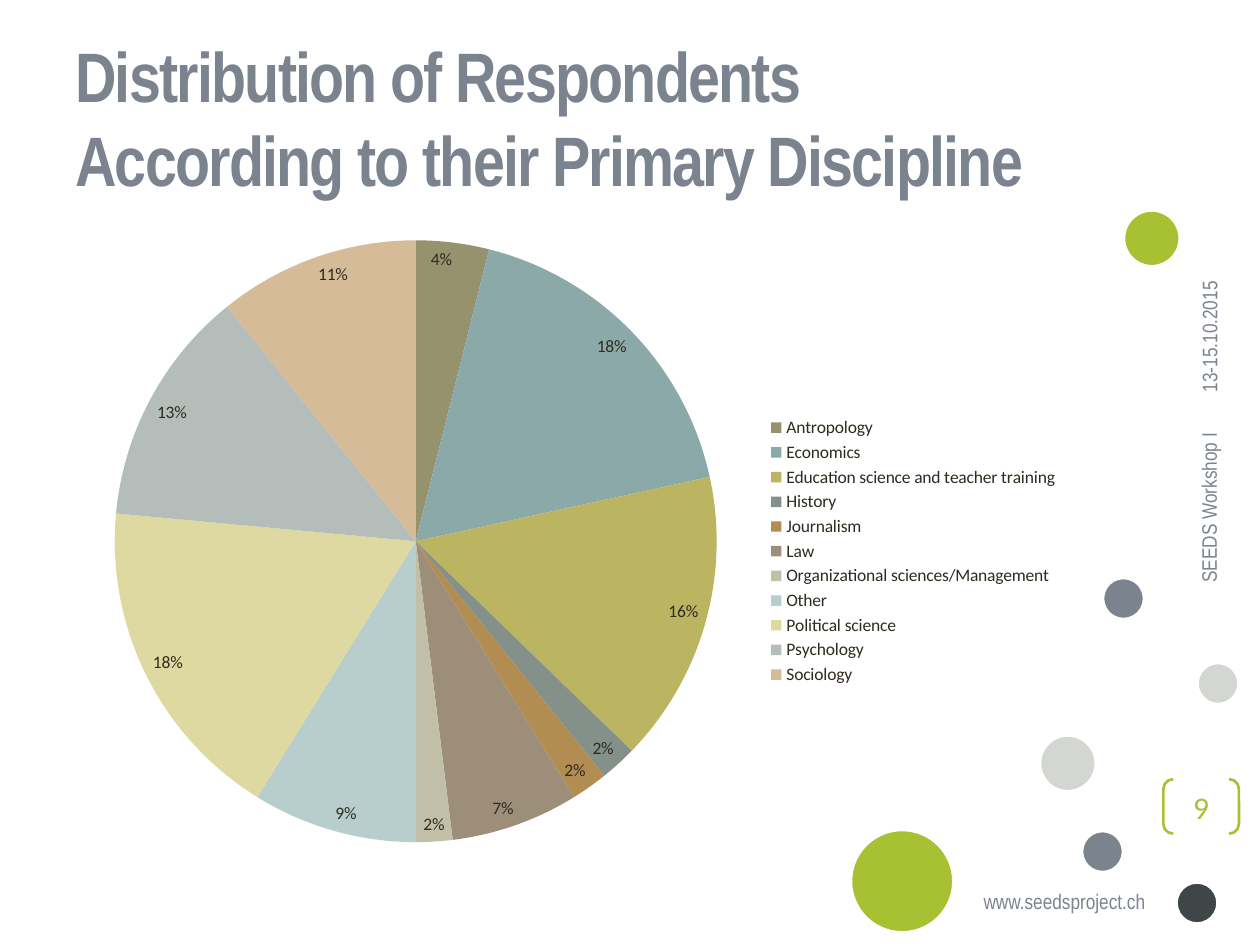
from dataclasses import dataclass
from typing import Any

from lxml.etree import SubElement
from pptx import Presentation
from pptx.chart.data import CategoryChartData
from pptx.dml.color import RGBColor
from pptx.enum.chart import XL_CHART_TYPE, XL_LABEL_POSITION, XL_LEGEND_POSITION
from pptx.enum.shapes import MSO_SHAPE
from pptx.enum.text import MSO_ANCHOR, PP_ALIGN
from pptx.oxml.ns import qn
from pptx.util import Inches, Pt

COLS, ROWS = 120, 90


@dataclass(frozen=True)
class Theme:
    lime: str = "A7C133"
    slate: str = "7B838F"
    coal: str = "404548"
    mist: str = "D4D6D2"
    white: str = "FFFFFF"
    ink: str = "2F2B20"
    head: str = "Arial Narrow"
    body: str = "Calibri"
    title: int = 40
    page: int = 18
    note: int = 12
    small: int = 10


@dataclass(frozen=True)
class Frame:
    """Left, top, width and height in grid columns and rows."""
    col: float
    row: float
    wide: float
    high: float


@dataclass(frozen=True)
class Dot:
    col: float
    row: float
    size: float
    fill: str


@dataclass(frozen=True)
class Label:
    text: str
    frame: Frame
    size: int
    form: dict[str, Any]
    bold: bool = False
    turn: int = 0
    align: PP_ALIGN = PP_ALIGN.LEFT


@dataclass(frozen=True)
class Slice:
    name: str
    share: int
    fill: str


THEME = Theme()
MID = {"word_wrap": True, "vertical_anchor": MSO_ANCHOR.MIDDLE}

DOTS = [
    Dot(81, 79, 9.84, THEME.lime),
    Dot(107, 20, 5.4, THEME.lime),
    Dot(112, 84, 4, THEME.coal),
    Dot(99, 70, 5.4, THEME.mist),
    Dot(114, 63.1, 4, THEME.mist),
    Dot(103, 79.1, 4, THEME.slate),
    Dot(105, 55, 4, THEME.slate),
]

LABELS = [
    Label("www.seedsproject.ch", Frame(92.5, 84, 18.5, 3.6), THEME.note, {"word_wrap": False}),
    Label("SEEDS Workshop I", Frame(104.6, 48.4, 21, 4.3), THEME.note, MID,
          turn=270, align=PP_ALIGN.RIGHT),
    Label("13-15.10.2015", Frame(107.4, 28.8, 15.5, 4), THEME.note, MID, turn=270),
    Label("Distribution of Respondents According to their Primary Discipline",
          Frame(6, 3.6, 96, 15), THEME.title, MID, bold=True),
]

SLICES = [
    Slice("Antropology", 4, "96926E"),
    Slice("Economics", 18, "8BA9A8"),
    Slice("Education science and teacher training", 16, "BBB460"),
    Slice("History", 2, "84918B"),
    Slice("Journalism", 2, "B18D52"),
    Slice("Law", 7, "9D8E79"),
    Slice("Organizational sciences/Management", 2, "C1BFA8"),
    Slice("Other", 9, "B8CECD"),
    Slice("Political science", 18, "DDD9A0"),
    Slice("Psychology", 13, "B4BDB9"),
    Slice("Sociology", 11, "D6BB98"),
]


def place(deck, frame: Frame) -> tuple[int, ...]:
    cell_w, cell_h = deck.slide_width / COLS, deck.slide_height / ROWS
    return (int(frame.col * cell_w), int(frame.row * cell_h),
            int(frame.wide * cell_w), int(frame.high * cell_h))


def apply(thing, form: dict[str, Any]) -> None:
    for key, value in form.items():
        setattr(thing, key, value)


def paint(font, size: int, name: str, color: str, bold: bool = False) -> None:
    apply(font, {"size": Pt(size), "name": name, "bold": bold})
    font.color.rgb = RGBColor.from_string(color)


def draw_dot(deck, slide, dot: Dot) -> None:
    frame = Frame(dot.col, dot.row, dot.size, dot.size)
    shape = slide.shapes.add_shape(MSO_SHAPE.OVAL, *place(deck, frame))
    shape.shadow.inherit = False
    shape.fill.solid()
    shape.fill.fore_color.rgb = RGBColor.from_string(dot.fill)
    shape.line.color.rgb = RGBColor.from_string(THEME.white)
    shape.line.width = Pt(2)


def draw_label(deck, slide, label: Label) -> None:
    box = slide.shapes.add_textbox(*place(deck, label.frame))
    box.rotation = label.turn
    apply(box.text_frame, label.form)
    par = box.text_frame.paragraphs[0]
    par.alignment = label.align
    run = par.add_run()
    run.text = label.text
    paint(run.font, label.size, THEME.head, THEME.slate, label.bold)
    if label.bold:  # tight title letters
        run.font._element.set("spc", "-100")


def draw_page(deck, slide, page: str) -> None:
    shape = slide.shapes.add_shape(MSO_SHAPE.DOUBLE_BRACKET,
                                   *place(deck, Frame(110.8, 74.2, 7.2, 5.2)))
    shape.shadow.inherit = False
    shape.adjustments[0] = 0.18
    shape.fill.background()
    shape.line.color.rgb = RGBColor.from_string(THEME.lime)
    shape.line.width = Pt(1.5)
    sides = ("left", "top", "right", "bottom")
    apply(shape.text_frame, MID | {f"margin_{side}": 0 for side in sides})
    par = shape.text_frame.paragraphs[0]
    par.alignment = PP_ALIGN.CENTER
    run = par.add_run()
    run.text = page
    paint(run.font, THEME.page, THEME.body, THEME.lime)


def draw_pie(deck, slide, parts: list[Slice]) -> None:
    data = CategoryChartData()
    data.categories = [part.name for part in parts]
    data.add_series("Series 1", [part.share for part in parts])
    chart = slide.shapes.add_chart(XL_CHART_TYPE.PIE, *place(deck, Frame(6, 21, 96, 63)),
                                   data).chart
    apply(chart, {"has_title": False, "has_legend": True})
    paint(chart.font, THEME.small, THEME.body, THEME.ink)
    apply(chart.legend, {"position": XL_LEGEND_POSITION.RIGHT, "include_in_layout": False})
    plot = chart.plots[0]
    apply(plot, {"vary_by_categories": True, "has_data_labels": True})
    apply(plot.data_labels, {"show_percentage": True, "show_value": False,
                             "number_format": "0%", "number_format_is_linked": False,
                             "position": XL_LABEL_POSITION.INSIDE_END})
    for spot, part in enumerate(parts):
        fill = plot.series[0].points[spot].format.fill
        fill.solid()
        fill.fore_color.rgb = RGBColor.from_string(part.fill)
    # Fix the pie's place within the chart
    area = chart._chartSpace.chart.plotArea
    for old in area.findall(qn("c:layout")):
        area.remove(old)
    layout = SubElement(area, qn("c:layout"))
    area.insert(0, layout)
    manual = SubElement(layout, qn("c:manualLayout"))
    rules = {"layoutTarget": "inner", "xMode": "edge", "yMode": "edge",
             "x": "0.05", "y": "0.03", "w": "0.6", "h": "0.91"}
    for key, value in rules.items():
        SubElement(manual, qn(f"c:{key}")).set("val", value)


def main() -> None:
    deck = Presentation()
    apply(deck, {"slide_width": Inches(10), "slide_height": Inches(7.5)})
    slide = deck.slides.add_slide(deck.slide_layouts[6])
    # Side dots
    for dot in DOTS:
        draw_dot(deck, slide, dot)
    # Title, footer and page number
    for label in LABELS:
        draw_label(deck, slide, label)
    draw_page(deck, slide, "9")
    # Share of each discipline
    draw_pie(deck, slide, SLICES)
    deck.save("out.pptx")


if __name__ == "__main__":
    main()
